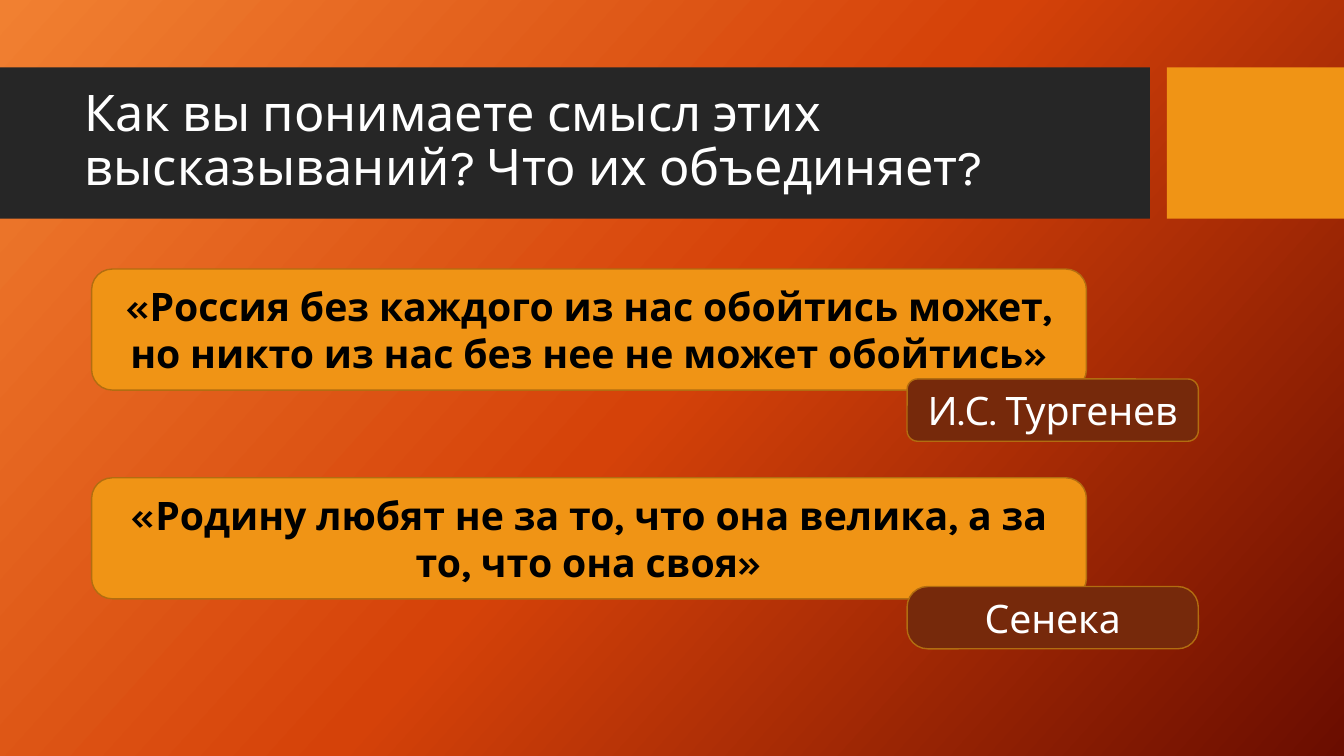
from copy import deepcopy
from dataclasses import dataclass

from pptx import Presentation
from pptx import util as u
from pptx.dml.color import RGBColor
from pptx.enum import shapes, text
from pptx.oxml.ns import qn


@dataclass(frozen=True)
class Theme:
    font: str = "Karla"
    head: int = 36
    body: int = 28
    white: str = "FFFFFF"
    black: str = "000000"
    dark: str = "262626"
    gold: str = "F09415"
    brown: str = "76290B"
    edge: str = "B26D10"
    glow: tuple = ((0, "F18031"), (0.5, "D54209"), (1, "6A0D00"))
    angle: int = 42


@dataclass(frozen=True)
class Box:
    left: float
    top: float
    width: float
    height: float


@dataclass(frozen=True)
class Saying:
    quote: str
    author: str
    top: float
    drop: float
    round: float


THEME = Theme()
BARS = (
    (Box(0, 1.7, 28.98, 3.81), THEME.dark),
    (Box(29.41, 1.7, 4.46, 3.81), THEME.gold),
)
SAYINGS = (
    Saying("«Россия без каждого из нас обойтись может, но никто из нас без нее не может обойтись»",
           "И.С. Тургенев", 6.78, 2.77, 0.17),
    Saying("«Родину любят не за то, что она велика, а за то, что она своя»",
           "Сенека", 12.04, 2.74, 0.33),
)


def paint(slide) -> None:
    fill = slide.background.fill
    fill.gradient()
    fill.gradient_angle = 360 - THEME.angle
    stops = next(slide.element.iter(qn("a:gsLst")))
    stops.append(deepcopy(stops[-1]))
    for stop, (place, color) in zip(fill.gradient_stops, THEME.glow):
        stop.position = place
        stop.color.rgb = RGBColor.from_string(color)


def place(shape, box: Box) -> None:
    shape.left, shape.top = u.Cm(box.left), u.Cm(box.top)
    shape.width, shape.height = u.Cm(box.width), u.Cm(box.height)


def write(shape, words: str, size: int, color: str, align, bold: bool = False) -> None:
    frame = shape.text_frame
    frame.text = words
    frame.word_wrap = True
    frame.auto_size = text.MSO_AUTO_SIZE.NONE
    frame.vertical_anchor = text.MSO_ANCHOR.MIDDLE
    para = frame.paragraphs[0]
    para.alignment = align
    font = para.runs[0].font
    font.name, font.size, font.bold = THEME.font, u.Pt(size), bold
    font.color.rgb = RGBColor.from_string(color)


def block(slide, kind, box: Box, color: str):
    shape = slide.shapes.add_shape(kind, 0, 0, 0, 0)
    place(shape, box)
    shape.shadow.inherit = False
    shape.fill.solid()
    shape.fill.fore_color.rgb = RGBColor.from_string(color)
    shape.line.fill.background()
    return shape


def card(slide, box: Box, color: str, words: str, ink: str, bold: bool, curve: float) -> None:
    shape = block(slide, shapes.MSO_SHAPE.ROUNDED_RECTANGLE, box, color)
    shape.adjustments[0] = curve
    shape.line.color.rgb = RGBColor.from_string(THEME.edge)
    shape.line.width = u.Pt(1)
    write(shape, words, THEME.body, ink, text.PP_ALIGN.CENTER, bold)


def main() -> None:
    deck = Presentation()
    deck.slide_width, deck.slide_height = u.Cm(33.87), u.Cm(19.05)
    slide = deck.slides.add_slide(deck.slide_layouts.get_by_name("Title Only"))
    paint(slide)

    for box, color in BARS:
        block(slide, shapes.MSO_SHAPE.RECTANGLE, box, color)

    title = slide.shapes.title
    slide.shapes.element.append(title.element)
    place(title, Box(1.88, 2.08, 26.7, 3))
    write(title, "Как вы понимаете смысл этих высказываний? Что их объединяет?",
          THEME.head, THEME.white, text.PP_ALIGN.LEFT)
    title.text_frame.paragraphs[0].line_spacing = 0.9

    for item in SAYINGS:
        card(slide, Box(2.31, item.top, 25.07, 3.05), THEME.gold,
             item.quote, THEME.black, True, 0.17)
        card(slide, Box(22.86, item.top + item.drop, 7.34, 1.57), THEME.brown,
             item.author, THEME.white, False, item.round)

    deck.save("out.pptx")


if __name__ == "__main__":
    main()
